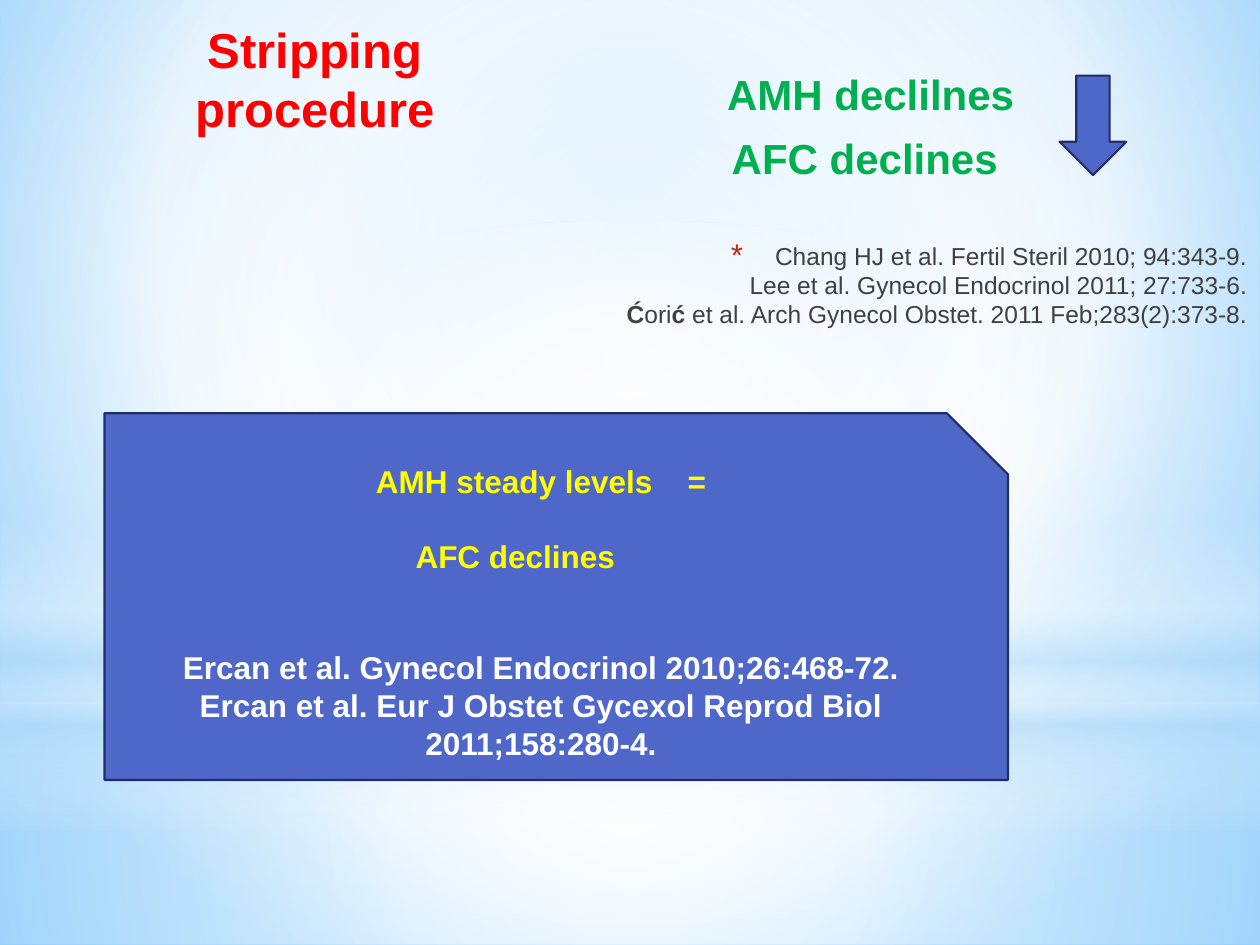
"""Build the slide on ovarian reserve after the stripping procedure."""
from lxml.etree import SubElement
from pptx import Presentation
from pptx.dml.color import RGBColor
from pptx.enum.shapes import MSO_SHAPE
from pptx.enum.text import MSO_ANCHOR, PP_ALIGN
from pptx.oxml.ns import qn
from pptx.util import Inches, Pt

RED = RGBColor(0xFF, 0x00, 0x00)
GREEN = RGBColor(0x00, 0xB0, 0x50)
GREY = RGBColor(0x40, 0x40, 0x40)
YELLOW = RGBColor(0xFF, 0xFF, 0x00)
WHITE = RGBColor(0xFF, 0xFF, 0xFF)
BLUE = RGBColor(0x4E, 0x67, 0xC8)
NAVY = RGBColor(0x1F, 0x2E, 0x69)
BULLET_RED = RGBColor(0xC3, 0x26, 0x0C)
SKY = RGBColor(0x9E, 0xD5, 0xFF)
DEEP_SKY = RGBColor(0x5B, 0xB9, 0xFF)
PALE = RGBColor(0xB4, 0xDC, 0xFA)

CENTRE = (50, 50, 50, 50)
BACKDROP = [(0, SKY, 100), (60, WHITE, 100), (100, DEEP_SKY, 100)]
GLOWS = [
    (MSO_SHAPE.RECTANGLE, (0, 5.58, 10, 1.92), CENTRE,
     [(0, WHITE, 91), (37, WHITE, 76), (100, PALE, 79)]),
    (MSO_SHAPE.RECTANGLE, (0, 0, 10, 5.58), CENTRE,
     [(0, WHITE, 89), (48, WHITE, 62), (100, PALE, 79)]),
    (MSO_SHAPE.RECTANGLE, (0, 4.12, 10, 2.5), None,
     [(0, WHITE, 0), (29, WHITE, 30), (45, PALE, 40),
      (55, WHITE, 26), (65, PALE, 60), (100, WHITE, 0)]),
    (MSO_SHAPE.OVAL, (0, 1.75, 10, 5.58), CENTRE,
     [(0, WHITE, 100), (56, WHITE, 0)]),
]

PROCEDURE = "Stripping procedure"
DECLINES = ["AMH declilnes", "AFC declines "]
CITATIONS = [
    [("Chang HJ et al. Fertil Steril 2010; 94:343-9.", False)],
    [("Lee et al. Gynecol Endocrinol 2011; 27:733-6.", False)],
    [("Ć", True), ("ori", False), ("ć", True),
     (" et al. Arch Gynecol Obstet. 2011 Feb;283(2):373-8.", False)],
]
STEADY = [("AMH steady levels", 0), (" ", 15), ("=", 0)]
STEADY_AFC = "AFC declines"
ERCAN = ["Ercan et al. Gynecol Endocrinol 2010;26:468-72.",
         "Ercan et al. Eur J Obstet Gycexol Reprod Biol 2011;158:280-4."]


def set_gradient(owner, fill, stops, focus):
    fill.gradient()
    gradient = owner.element.find(".//" + qn("a:gradFill"))
    gradient.clear()
    stop_list = SubElement(gradient, qn("a:gsLst"))
    for position, color, opacity in stops:
        stop = SubElement(stop_list, qn("a:gs"), pos=str(position * 1000))
        tint = SubElement(stop, qn("a:srgbClr"), val=str(color))
        SubElement(tint, qn("a:alpha"), val=str(opacity * 1000))
    if focus:
        route = SubElement(gradient, qn("a:path"), path="circle")
        edges = {side: str(share * 1000) for side, share in zip("ltrb", focus)}
        SubElement(route, qn("a:fillToRect"), **edges)
    else:
        SubElement(gradient, qn("a:lin"), ang="5400000", scaled="0")


def add_panel(slide, preset, box):
    panel = slide.shapes.add_shape(preset, *map(Inches, box))
    panel.shadow.inherit = False
    return panel


def add_blue_panel(slide, preset, box):
    panel = add_panel(slide, preset, box)
    panel.fill.solid()
    panel.fill.fore_color.rgb = BLUE
    panel.line.color.rgb = NAVY
    panel.line.width = Pt(1.25)
    return panel


def add_frame(slide, box, anchor):
    frame = slide.shapes.add_textbox(*map(Inches, box)).text_frame
    frame.word_wrap = True
    frame.vertical_anchor = anchor
    return frame


def write(paragraph, text, *, size, color, bold=True, align=PP_ALIGN.CENTER,
          before=0, after=0, spacing=0):
    paragraph.alignment = align
    paragraph.space_before = Pt(before)
    paragraph.space_after = Pt(after)
    run = paragraph.add_run()
    run.text = text
    run.font.name = "Arial"
    run.font.size = Pt(size)
    run.font.bold = bold
    run.font.color.rgb = color
    if spacing:
        run.font._element.set("spc", str(spacing * 100))


def set_indent(paragraph, left, first=0):
    properties = paragraph._p.get_or_add_pPr()
    properties.set("marL", str(Inches(left)))
    properties.set("indent", str(Inches(first)))
    return properties


def add_citations(slide):
    paragraph = add_frame(slide, (3.9, 1.86, 6.1, 1.25), MSO_ANCHOR.TOP).paragraphs[0]
    for index, citation in enumerate(CITATIONS):
        if index:
            paragraph.add_line_break()
        for text, bold in citation:
            write(paragraph, text, size=14, color=GREY, bold=bold, align=PP_ALIGN.RIGHT)
    for line_break in paragraph._p.findall(qn("a:br")):
        SubElement(line_break, qn("a:rPr"), sz="1400")
    properties = set_indent(paragraph, 0.35, -0.35)
    bullet_color = SubElement(properties, qn("a:buClr"))
    SubElement(bullet_color, qn("a:srgbClr"), val=str(BULLET_RED))
    SubElement(properties, qn("a:buSzPct"), val="128000")
    SubElement(properties, qn("a:buFont"), typeface="Arial")
    SubElement(properties, qn("a:buChar"), char="*")


def add_steady_panel(slide):
    frame = add_blue_panel(slide, MSO_SHAPE.SNIP_1_RECTANGLE,
                           (0.83, 3.28, 7.17, 2.91)).text_frame
    frame.word_wrap = True
    frame.vertical_anchor = MSO_ANCHOR.MIDDLE
    for text, spacing in STEADY:
        write(frame.paragraphs[0], text, size=18, color=YELLOW, spacing=spacing)
    afc = frame.add_paragraph()
    write(afc, STEADY_AFC, size=18, color=YELLOW, align=PP_ALIGN.LEFT, before=21)
    set_indent(afc, 2.37)
    for text, before in zip(ERCAN, (42, 0)):
        write(frame.add_paragraph(), text, size=18, color=WHITE, before=before)


def main():
    deck = Presentation()
    deck.slide_width, deck.slide_height = Inches(10), Inches(7.5)
    slide = deck.slides.add_slide(deck.slide_layouts[6])
    set_gradient(slide, slide.background.fill, BACKDROP, (20, 10, 20, 60))
    for preset, box, focus, stops in GLOWS:
        glow = add_panel(slide, preset, box)
        set_gradient(glow, glow.fill, stops, focus)
        glow.line.fill.background()

    procedure = add_frame(slide, (0.67, 0.44, 3.66, 0.7), MSO_ANCHOR.BOTTOM)
    write(procedure.paragraphs[0], PROCEDURE, size=28, color=RED, before=5.6, after=3)
    declines = add_frame(slide, (5.08, 0.8, 3.66, 0.7), MSO_ANCHOR.BOTTOM)
    for index, text in enumerate(DECLINES):
        paragraph = declines.add_paragraph() if index else declines.paragraphs[0]
        write(paragraph, text, size=24, color=GREEN, before=4.8, after=3)

    add_citations(slide)
    add_blue_panel(slide, MSO_SHAPE.DOWN_ARROW, (8.41, 0.6, 0.53, 0.79))
    add_steady_panel(slide)
    deck.save("out.pptx")


if __name__ == "__main__":
    main()
